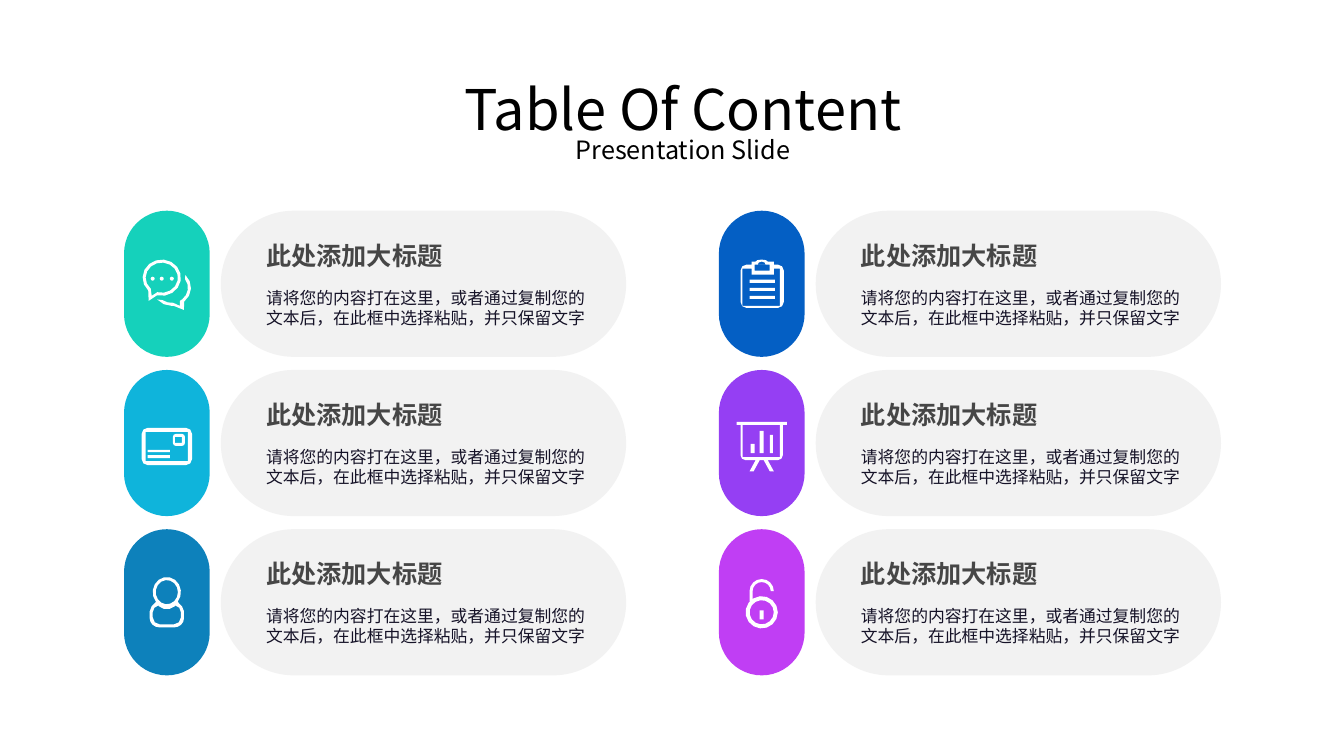
import math
from dataclasses import dataclass

import pptx
import pptx.dml.color
import pptx.enum.shapes
import pptx.enum.text
import pptx.oxml.ns
import pptx.util
from lxml import etree

Inches = pptx.util.Inches
RGBColor = pptx.dml.color.RGBColor
PP_ALIGN = pptx.enum.text.PP_ALIGN
Contour = list[tuple[float, float]]

FONT = "Noto Sans CJK SC"
BLACK = RGBColor(0x00, 0x00, 0x00)
WHITE = RGBColor(0xFF, 0xFF, 0xFF)
PANEL_GREY = RGBColor(0xF2, 0xF2, 0xF2)
HEADING_GREY = RGBColor(0x46, 0x46, 0x46)
BODY_INK = RGBColor(0x15, 0x12, 0x27)
TEAL = RGBColor(0x15, 0xD1, 0xBB)
CYAN = RGBColor(0x0F, 0xB4, 0xDB)
OCEAN = RGBColor(0x0D, 0x81, 0xBB)
BLUE = RGBColor(0x04, 0x5F, 0xC4)
VIOLET = RGBColor(0x95, 0x3F, 0xF3)
MAGENTA = RGBColor(0xC0, 0x3E, 0xF4)

HEADING = "此处添加大标题"
BODY = "请将您的内容打在这里，或者通过复制您的文本后，在此框中选择粘贴，并只保留文字"

LEFT, TOP = 1.23, 2.09
COLUMN_STEP, ROW_STEP, ROWS = 5.9, 1.58, 3
PILL_WIDTH, PANEL_WIDTH, ITEM_HEIGHT = 0.85, 4.02, 1.45
PANEL_OFFSET, TEXT_OFFSET = 0.96, 1.31


@dataclass(frozen=True)
class Style:
    size: int
    color: RGBColor
    bold: bool = False
    align: PP_ALIGN = PP_ALIGN.LEFT
    line_spacing: float | None = None
    space_before: int = 0


@dataclass(frozen=True)
class Item:
    color: RGBColor
    icon: list[Contour]


def arc(cx: float, cy: float, rx: float, ry: float,
        start: float = 0, end: float = 360) -> Contour:
    """Points along an ellipse; angles in degrees, clockwise from the right."""
    step_angle = 24 if rx > 0.08 else 45
    steps = max(1, round(abs(end - start) / step_angle))
    angles = [math.radians(start + (end - start) * i / steps) for i in range(steps + 1)]
    return [(cx + rx * math.cos(a), cy + ry * math.sin(a)) for a in angles]


def rounded(x: float, y: float, w: float, h: float, r: float) -> Contour:
    right, bottom = x + w - r, y + h - r
    return [*arc(right, bottom, r, r, 0, 90), *arc(x + r, bottom, r, r, 90, 180),
            *arc(x + r, y + r, r, r, 180, 270), *arc(right, y + r, r, r, 270, 360)]


def bar(x: float, y: float, w: float, h: float) -> Contour:
    return [(x, y), (x + w, y), (x + w, y + h), (x, y + h)]


# Icon contours are in inches from the pill's centre; nested contours cut holes.
CHAT = [
    [*arc(-0.05, -0.06, 0.19, 0.18, 135, 464), (-0.18, 0.17)],
    [*arc(-0.05, -0.06, 0.16, 0.15, 133, 466), (-0.15, 0.12)],
    *[arc(x, -0.05, 0.02, 0.02) for x in (-0.14, -0.05, 0.05)],
    [*arc(0.05, 0.04, 0.19, 0.18, -45, 50), (0.17, 0.26), (0.07, 0.22),
     *arc(0.05, 0.04, 0.19, 0.18, 90, 140), *arc(0.05, 0.04, 0.16, 0.15, 125, 85),
     (0.13, 0.22), (0.13, 0.17), *arc(0.05, 0.04, 0.16, 0.15, 50, -35)],
]
POSTCARD = [
    rounded(-0.25, -0.15, 0.5, 0.37, 0.06), bar(-0.21, -0.11, 0.42, 0.29),
    rounded(0.06, -0.09, 0.12, 0.12, 0.03), bar(0.08, -0.06, 0.07, 0.06),
    bar(-0.19, 0.07, 0.22, 0.02), bar(-0.19, 0.12, 0.22, 0.03),
]
PERSON = [
    [*arc(0, -0.1, 0.14, 0.15, 140, 400), (0.15, 0.04), (0.17, 0.09),
     *arc(0.07, 0.16, 0.1, 0.09, 0, 90), *arc(-0.07, 0.16, 0.1, 0.09, 90, 180),
     (-0.17, 0.09), (-0.15, 0.04)],
    arc(0, -0.1, 0.11, 0.12),
    [*arc(0, -0.1, 0.14, 0.17, 125, 55), *arc(0.07, 0.1, 0.07, 0.07, -80, 0),
     *arc(0.07, 0.15, 0.07, 0.07, 0, 90), *arc(-0.07, 0.15, 0.07, 0.07, 90, 180),
     *arc(-0.07, 0.1, 0.07, 0.07, 180, 260)],
]
CLIPBOARD = [
    rounded(-0.21, -0.19, 0.43, 0.43, 0.06),
    [(-0.1, -0.19), (-0.1, -0.22), *arc(0, -0.22, 0.06, 0.02, 180, 360),
     (0.12, -0.22), (0.12, -0.19)],
    [(-0.19, -0.15), (-0.1, -0.15), (-0.1, -0.09), (0.12, -0.09), (0.12, -0.15),
     (0.18, -0.15), (0.18, 0.22), (-0.19, 0.22)],
    [(-0.07, -0.19), *arc(0, -0.19, 0.04, 0.03, 180, 360),
     (0.08, -0.19), (0.08, -0.13), (-0.07, -0.13)],
    *[bar(-0.12, y, 0.25, 0.03) for y in (-0.04, 0.04, 0.12)],
]
BOARD = [
    bar(-0.25, -0.21, 0.5, 0.03),
    [(-0.21, -0.18), *arc(-0.16, 0.12, 0.05, 0.05, 180, 90),
     *arc(0.16, 0.12, 0.05, 0.05, 90, 0), (0.21, -0.18), (0.18, -0.18),
     (0.18, 0.14), (-0.19, 0.14), (-0.19, -0.18)],
    *[[(s * 0.02, 0.17), (s * 0.06, 0.17), (s * 0.12, 0.28), (s * 0.08, 0.28)]
      for s in (-1, 1)],
    bar(-0.11, 0.01, 0.04, 0.09), bar(-0.02, -0.12, 0.04, 0.22), bar(0.08, -0.08, 0.03, 0.18),
]
PADLOCK = [
    arc(0, 0.1, 0.16, 0.16), arc(0, 0.1, 0.12, 0.12), bar(-0.02, 0.08, 0.04, 0.09),
    [(-0.12, 0), *arc(0, -0.11, 0.12, 0.12, 180, 360),
     *arc(0, -0.11, 0.09, 0.09, 360, 180), (-0.09, -0.03)],
]

ITEMS = [Item(TEAL, CHAT), Item(CYAN, POSTCARD), Item(OCEAN, PERSON),
         Item(BLUE, CLIPBOARD), Item(VIOLET, BOARD), Item(MAGENTA, PADLOCK)]


def paint(sp: pptx.shapes.autoshape.Shape, color: RGBColor) -> None:
    sp.shadow.inherit = False
    sp.fill.solid()
    sp.fill.fore_color.rgb = color
    sp.line.fill.background()


def add_capsule(slide: pptx.slide.Slide, x: float, y: float, w: float,
                color: RGBColor) -> None:
    sp = slide.shapes.add_shape(pptx.enum.shapes.MSO_SHAPE.ROUNDED_RECTANGLE,
                                Inches(x), Inches(y), Inches(w), Inches(ITEM_HEIGHT))
    sp.adjustments[0] = 0.5
    paint(sp, color)


def add_icon(slide: pptx.slide.Slide, cx: float, cy: float, icon: list[Contour]) -> None:
    contours = [[(Inches(cx + x), Inches(cy + y)) for x, y in c] for c in icon]
    builder = slide.shapes.build_freeform(*contours[0][0])
    builder.add_line_segments(contours[0][1:])
    for contour in contours[1:]:
        builder.move_to(*contour[0])
        builder.add_line_segments(contour[1:])
    paint(builder.convert_to_shape(), WHITE)


def add_text(slide: pptx.slide.Slide, x: float, y: float, w: float, h: float,
             text: str, style: Style) -> None:
    tf = slide.shapes.add_textbox(Inches(x), Inches(y), Inches(w), Inches(h)).text_frame
    tf.word_wrap = True
    tf.vertical_anchor = pptx.enum.text.MSO_ANCHOR.MIDDLE
    tf.text = text
    p = tf.paragraphs[0]
    p.alignment = style.align
    p.line_spacing = style.line_spacing
    p.space_before = pptx.util.Pt(style.space_before)
    font = p.runs[0].font
    font.name, font.size, font.bold = FONT, pptx.util.Pt(style.size), style.bold
    font.color.rgb = style.color
    ea = etree.SubElement(font._element, pptx.oxml.ns.qn("a:ea"))
    ea.set("typeface", FONT)


def add_item(slide: pptx.slide.Slide, x: float, y: float, item: Item) -> None:
    add_capsule(slide, x, y, PILL_WIDTH, item.color)
    add_capsule(slide, x + PANEL_OFFSET, y, PANEL_WIDTH, PANEL_GREY)
    add_icon(slide, x + PILL_WIDTH / 2, y + ITEM_HEIGHT / 2, item.icon)
    add_text(slide, x + TEXT_OFFSET, y + 0.24, 3.31, 0.4, HEADING,
             Style(18, HEADING_GREY, bold=True))
    add_text(slide, x + TEXT_OFFSET, y + 0.71, 3.42, 0.5, BODY, Style(12, BODY_INK))


def main() -> None:
    prs = pptx.Presentation()
    prs.slide_width, prs.slide_height = Inches(13.33), Inches(7.5)
    slide = prs.slides.add_slide(prs.slide_layouts[6])
    add_text(slide, 1.99, 0.54, 9.57, 1.15, "Table Of Content",
             Style(40, BLACK, align=PP_ALIGN.CENTER, line_spacing=0.9))
    add_text(slide, 1.99, 1.28, 9.57, 0.4, "Presentation Slide",
             Style(18, BLACK, align=PP_ALIGN.CENTER, space_before=10))
    for i, item in enumerate(ITEMS):
        column, row = divmod(i, ROWS)
        add_item(slide, LEFT + column * COLUMN_STEP, TOP + row * ROW_STEP, item)
    prs.save("out.pptx")


if __name__ == "__main__":
    main()
